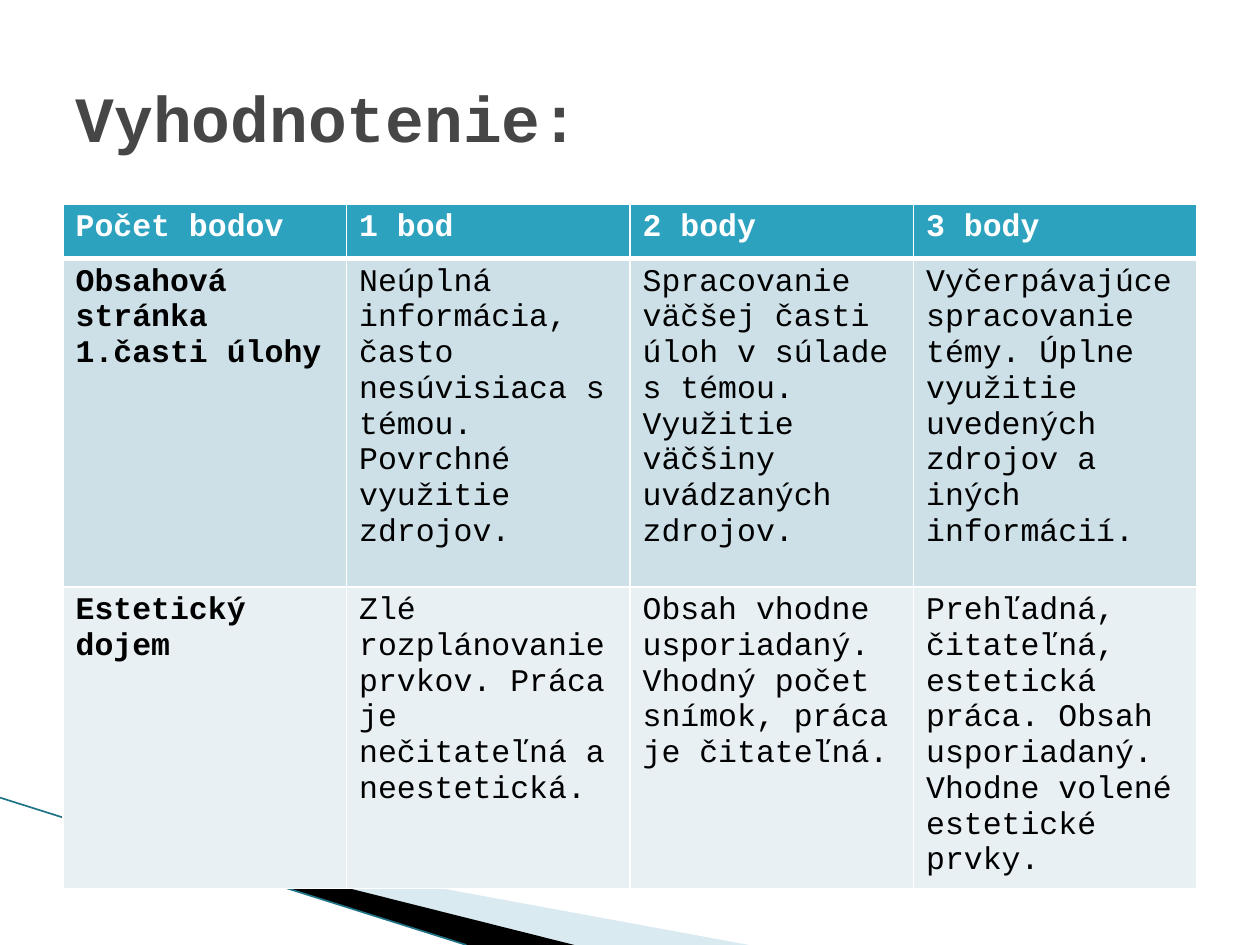
from dataclasses import dataclass

import lxml.etree
import pptx
import pptx.dml.color
import pptx.enum.shapes
import pptx.enum.text
import pptx.oxml.ns
import pptx.util

Cm = pptx.util.Cm


@dataclass(frozen=True)
class Theme:
    """Colours, font and type sizes of the slide."""
    font: str = "Courier New"
    title_size: float = 36.9
    table_size: float = 18
    title: str = "464646"
    header: str = "2DA2BF"
    bands: tuple = ("CDE0E8", "E8F0F4")
    body: str = "000000"
    white: str = "FFFFFF"
    pale_wave: str = "A0CBDC"
    dark_wave: str = "000000"
    wave_edge: str = "1F7386"


@dataclass(frozen=True)
class Box:
    """Region of the slide in centimetres."""
    left: float
    top: float
    width: float
    height: float


THEME = Theme()
CRITERIA = [
    ("Počet bodov", "1 bod", "2 body", "3 body"),
    ("Obsahová stránka 1.časti úlohy",
     "Neúplná informácia, často nesúvisiaca s témou. Povrchné využitie zdrojov.",
     "Spracovanie väčšej časti úloh v súlade s témou. Využitie väčšiny uvádzaných zdrojov.",
     "Vyčerpávajúce spracovanie témy. Úplne využitie uvedených zdrojov a iných informácií."),
    ("Estetický dojem",
     "Zlé rozplánovanie prvkov. Práca je nečitateľná a neestetická.",
     "Obsah vhodne usporiadaný. Vhodný počet snímok, práca je čitateľná.",
     "Prehľadná, čitateľná, estetická práca. Obsah usporiadaný. Vhodne volené estetické prvky."),
]
ROW_SHARES = (0.08, 0.48, 0.44)


def rgb(colour):
    """Turn a hex string into a colour."""
    return pptx.dml.color.RGBColor.from_string(colour)


def add_run(paragraph, text, size, colour, bold):
    """Add one formatted run to a paragraph."""
    run = paragraph.add_run()
    run.text = text
    run.font.name = THEME.font
    run.font.size = pptx.util.Pt(size)
    run.font.bold = bold
    run.font.color.rgb = rgb(colour)


def add_wedge(slide, box, points, colour, opacity=100):
    """Draw a filled outline whose points are relative to the box."""
    corners = [(Cm(box.left + x), Cm(box.top + y)) for x, y in points]
    builder = slide.shapes.build_freeform(*corners[0])
    builder.add_line_segments(corners[1:])
    wedge = builder.convert_to_shape()
    wedge.shadow.inherit = False
    wedge.fill.solid()
    wedge.fill.fore_color.rgb = rgb(colour)
    wedge.line.fill.background()
    if opacity < 100:
        shade = wedge.fill._xPr.find(".//" + pptx.oxml.ns.qn("a:srgbClr"))
        lxml.etree.SubElement(shade, pptx.oxml.ns.qn("a:alpha"), val=str(opacity * 1000))


def add_wave(slide, box):
    """Draw the sweeping decoration at the foot of the slide."""
    foot = box.height
    add_wedge(slide, box, [(1.4, 0.45), (box.width, foot), (11.58, foot)], THEME.pale_wave, 40)
    add_wedge(slide, box, [(1.35, 0.4), (11.58, foot), (9.4, foot)], THEME.dark_wave)
    edge = slide.shapes.add_connector(
        pptx.enum.shapes.MSO_CONNECTOR.STRAIGHT,
        Cm(box.left), Cm(box.top), Cm(box.left + 9.4), Cm(box.top + foot))
    edge.line.color.rgb = rgb(THEME.wave_edge)
    edge.line.width = pptx.util.Pt(0.95)
    lxml.etree.SubElement(edge._element.spPr, pptx.oxml.ns.qn("a:effectLst"))


def add_title(slide, box, text):
    """Place and format the title placeholder."""
    title = slide.shapes.title
    title.left, title.top = Cm(box.left), Cm(box.top)
    title.width, title.height = Cm(box.width), Cm(box.height)
    title.text_frame.vertical_anchor = pptx.enum.text.MSO_ANCHOR.MIDDLE
    paragraph = title.text_frame.paragraphs[0]
    paragraph.alignment = pptx.enum.text.PP_ALIGN.LEFT
    add_run(paragraph, text, THEME.title_size, THEME.title, True)


def set_borders(cell, widths):
    """Give the cell white borders, with widths in points by side."""
    properties = cell._tc.get_or_add_tcPr()
    for side, width in widths.items():
        border = lxml.etree.SubElement(
            properties, pptx.oxml.ns.qn(f"a:ln{side}"), w=str(pptx.util.Pt(width)))
        fill = lxml.etree.SubElement(border, pptx.oxml.ns.qn("a:solidFill"))
        lxml.etree.SubElement(fill, pptx.oxml.ns.qn("a:srgbClr"), val=THEME.white)


def add_criteria(slide, box, criteria):
    """Build the grading table with a header row and shaded rows."""
    columns = len(criteria[0])
    table = slide.shapes.add_table(
        len(criteria), columns,
        Cm(box.left), Cm(box.top), Cm(box.width), Cm(box.height)).table
    table.horz_banding = False
    for column in table.columns:
        column.width = Cm(box.width / columns)
    for row, (labels, share) in enumerate(zip(criteria, ROW_SHARES)):
        table.rows[row].height = Cm(box.height * share)
        is_header = row == 0
        for column, label in enumerate(labels):
            cell = table.cell(row, column)
            set_borders(cell, {"L": 1, "R": 1, "T": 3 if row == 1 else 1,
                               "B": 3 if is_header else 1})
            cell.fill.solid()
            cell.fill.fore_color.rgb = rgb(THEME.header if is_header else THEME.bands[row - 1])
            add_run(cell.text_frame.paragraphs[0], label, THEME.table_size,
                    THEME.white if is_header else THEME.body, is_header or column == 0)


def main():
    """Build and save the evaluation slide."""
    deck = pptx.Presentation()
    deck.slide_width, deck.slide_height = Cm(25.4), Cm(19.05)
    slide = deck.slides.add_slide(deck.slide_layouts.get_by_name("Title Only"))
    add_wave(slide, Box(0, 16.08, 15.1, 2.97))
    add_criteria(slide, Box(1.27, 4.11, 22.86, 13.8), CRITERIA)
    add_title(slide, Box(1.27, 0.76, 22.86, 3.18), "Vyhodnotenie:")
    deck.save("out.pptx")


if __name__ == "__main__":
    main()
